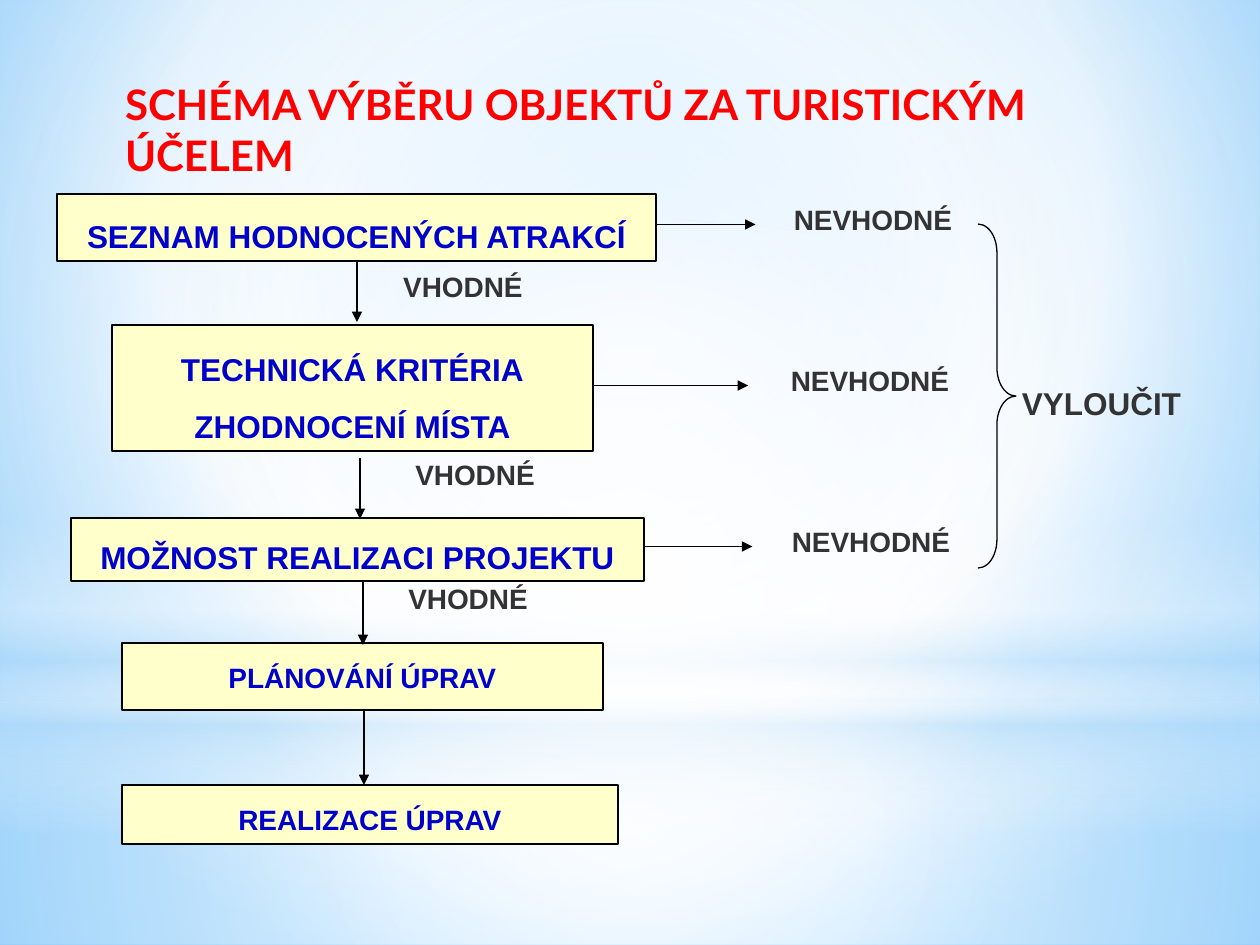
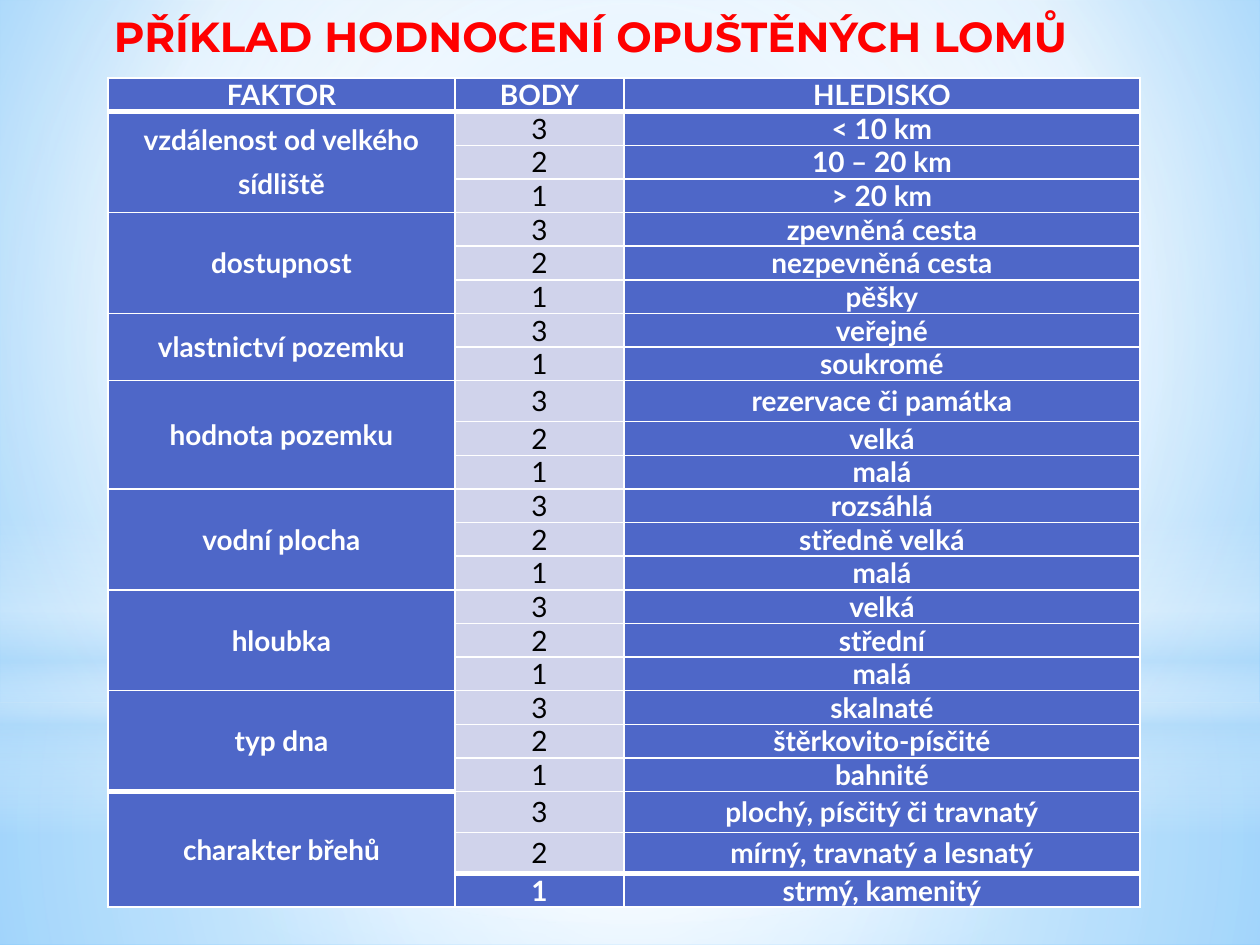
from lxml.etree import SubElement
from pptx import Presentation
from pptx.dml.color import RGBColor
from pptx.enum.shapes import MSO_CONNECTOR, MSO_SHAPE
from pptx.enum.text import MSO_ANCHOR, PP_ALIGN
from pptx.oxml.ns import qn
from pptx.util import Emu, Pt

PX = 914400 / 126
WIDTH, HEIGHT = 1260, 945

RED, BLACK, WHITE = "FF0000", "000000", "FFFFFF"
BOX_FILL, BOX_TEXT, LABEL_TEXT = "FFFFCC", "0000CC", "333333"
CELL_DARK, CELL_LIGHT = "4E67C8", "D0D3EB"
SKY = "B4DCFA"
CENTRE = (50, 50, 50, 50)

# Gradient stops: position, colour, opacity (all in percent)
PAGE_STOPS = [(0, "9ED5FF", 100), (60, WHITE, 100), (100, "5BB9FF", 100)]
BACKDROP = [
    # shape, left, top, width, height, stops, focus (None means top to bottom)
    (MSO_SHAPE.RECTANGLE, 0, 703, WIDTH, 242,
     [(0, WHITE, 91), (37, WHITE, 76), (100, SKY, 79)], CENTRE),
    (MSO_SHAPE.RECTANGLE, 0, 0, WIDTH, 703,
     [(0, WHITE, 89), (48, WHITE, 62), (100, SKY, 79)], CENTRE),
    (MSO_SHAPE.RECTANGLE, 0, 519, WIDTH, 315,
     [(0, WHITE, 0), (29, WHITE, 30), (45, SKY, 40), (55, WHITE, 26),
      (65, SKY, 60), (100, WHITE, 0)], None),
    (MSO_SHAPE.OVAL, 0, 220, WIDTH, 703,
     [(0, WHITE, 100), (56, WHITE, 0)], CENTRE),
]


def px(value):
    return Emu(round(value * PX))


def colour(code):
    return RGBColor.from_string(code)


def set_insets(holder, insets):
    """Set the inner margins of a text frame or a table cell."""
    holder.margin_left, holder.margin_top, holder.margin_right, holder.margin_bottom = map(px, insets)


def write(frame, text, size=16, font="Arial", ink=BLACK, bold=True,
          align=PP_ALIGN.CENTER, before=6, after=0, spacing=None):
    """Fill a text frame; a list gives one paragraph per item."""
    for index, line in enumerate([text] if isinstance(text, str) else text):
        para = frame.add_paragraph() if index else frame.paragraphs[0]
        para.text = line
        para.alignment = align
        para.space_before, para.space_after = Pt(before), Pt(after)
        if spacing:
            para.line_spacing = spacing
        for span in para.runs:
            span.font.size, span.font.name, span.font.bold = Pt(size), font, bold
            span.font.color.rgb = colour(ink)


def paint_gradient(parent, stops, focus=None):
    """Replace the solid fill inside parent by a gradient."""
    solid = parent.find(qn("a:solidFill"))
    gradient = SubElement(parent, qn("a:gradFill"), rotWithShape="1")
    parent.replace(solid, gradient)
    stop_list = SubElement(gradient, qn("a:gsLst"))
    for position, code, opacity in stops:
        stop = SubElement(stop_list, qn("a:gs"), pos=str(position * 1000))
        tint = SubElement(stop, qn("a:srgbClr"), val=code)
        if opacity < 100:
            SubElement(tint, qn("a:alpha"), val=str(opacity * 1000))
    if focus:
        circle = SubElement(gradient, qn("a:path"), path="circle")
        sides = {side: str(part * 1000) for side, part in zip("ltrb", focus)}
        SubElement(circle, qn("a:fillToRect"), **sides)
    else:
        SubElement(gradient, qn("a:lin"), ang="5400000", scaled="0")


def add_arrowhead(shape, end):
    shape.line._get_or_add_ln().append(
        shape._element.makeelement(qn("a:" + end), {"type": "triangle"}))


class SlideBuilder:
    """Holds the deck style and the current page."""

    def __init__(self):
        self.deck = Presentation()
        self.deck.slide_width, self.deck.slide_height = px(WIDTH), px(HEIGHT)
        self.page = None

    def new_page(self):
        self.page = self.deck.slides.add_slide(self.deck.slide_layouts[6])
        self.page.background.fill.solid()
        paint_gradient(self.page._element.find(".//" + qn("p:bgPr")), PAGE_STOPS, (20, 10, 20, 60))
        for kind, left, top, width, height, stops, focus in BACKDROP:
            glow = self.shape(kind, left, top, width, height, fill=WHITE)
            paint_gradient(glow._element.spPr, stops, focus)

    def shape(self, kind, left, top, width, height, fill=None, line=None):
        shape = self.page.shapes.add_shape(kind, px(left), px(top), px(width), px(height))
        shape.shadow.inherit = False
        if fill:
            shape.fill.solid()
            shape.fill.fore_color.rgb = colour(fill)
        else:
            shape.fill.background()
        if line:
            shape.line.color.rgb = colour(line)
            shape.line.width = Pt(0.75)
        else:
            shape.line.fill.background()
        return shape

    def fill_text(self, shape, text, insets=(0, 0, 0, 0), wrap=True, **style):
        frame = shape.text_frame
        frame.word_wrap = wrap
        frame.vertical_anchor = MSO_ANCHOR.TOP
        set_insets(frame, insets)
        write(frame, text, **style)

    def text(self, text, left, top, width, height, **style):
        box = self.page.shapes.add_textbox(px(left), px(top), px(width), px(height))
        self.fill_text(box, text, **style)

    def title(self, text, left, top, width, font, wrap=True):
        self.text(text, left, top, width, 63, size=24, font=font, ink=RED, before=0,
                  align=PP_ALIGN.LEFT, insets=(13, 6, 13, 6), wrap=wrap)

    def step(self, text, left, top, width, height, size=18, before=6, insets=(13, 1, 13, 6)):
        box = self.shape(MSO_SHAPE.RECTANGLE, left, top, width, height, BOX_FILL, BLACK)
        self.fill_text(box, text, size=size, ink=BOX_TEXT, before=before,
                       spacing=1.5, insets=insets)

    def callout(self, text, left, top, width, near, far):
        """Borderless label with an arrow from far to near (shares of its width)."""
        label = self.shape(MSO_SHAPE.LINE_CALLOUT_1_NO_BORDER, left, top, width, 43, line=BLACK)
        for index, value in enumerate((0.5, near, 0.5, far)):
            label.adjustments[index] = value
        add_arrowhead(label, "headEnd")
        self.fill_text(label, text, ink=LABEL_TEXT, insets=(3, 0, 0, 0))

    def down_arrow(self, x, top, bottom):
        arrow = self.page.shapes.add_connector(
            MSO_CONNECTOR.STRAIGHT, px(x), px(top), px(x), px(bottom))
        arrow.line.color.rgb = colour(BLACK)
        arrow.line.width = Pt(0.75)
        add_arrowhead(arrow, "tailEnd")
        SubElement(arrow._element.spPr, qn("a:effectLst"))

    def table(self, left, top, widths, heights):
        frame = self.page.shapes.add_table(
            len(heights), len(widths), px(left), px(top), px(sum(widths)), px(sum(heights)))
        table = frame.table
        table.first_row = table.horz_banding = False
        for column, width in zip(table.columns, widths):
            column.width = px(width)
        for row, height in zip(table.rows, heights):
            row.height = px(height)
        return table

    def cell(self, cell, text, fill=CELL_DARK, **style):
        cell.fill.solid()
        cell.fill.fore_color.rgb = colour(fill)
        cell.vertical_anchor = MSO_ANCHOR.MIDDLE
        write(cell.text_frame, text, font="Lato", **style)

    def cell_frame(self, cell, top, bottom):
        """Set the margins and the white rules of a cell."""
        set_insets(cell, (6, 0, 6, 0))
        if cell.is_spanned:
            SubElement(cell.text_frame.paragraphs[0]._p, qn("a:endParaRPr"), sz="1600")
        properties = cell._tc.get_or_add_tcPr()
        for index, (side, points) in enumerate(zip("LRTB", (1, 1, top, bottom))):
            line = SubElement(properties, qn("a:ln" + side), w=str(Pt(points)))
            SubElement(SubElement(line, qn("a:solidFill")), qn("a:srgbClr"), val=WHITE)
            properties.insert(index, line)


def build_scheme(builder):
    builder.new_page()
    # Rejection labels, whose arrows start beneath the steps
    for left, top, width, near, far in ((766, 203, 211, -0.05, -0.69),
                                        (759, 364, 219, -0.05, -0.76),
                                        (763, 525, 213, -0.05, -0.56)):
        builder.callout("NEVHODNÉ", left, top, width, near, far)
    # Steps of the selection
    builder.step("SEZNAM HODNOCENÝCH ATRAKCÍ", 57, 194, 599, 67, before=0, insets=(13, 4, 13, 6))
    builder.step("TECHNICKÁ KRITÉRIA\vZHODNOCENÍ MÍSTA", 112, 325, 481, 126, insets=(13, 6, 13, 6))
    builder.step("MOŽNOST REALIZACI PROJEKTU", 71, 518, 573, 63)
    builder.step("PLÁNOVÁNÍ ÚPRAV", 122, 643, 481, 67, size=16, insets=(3, 1, 3, 6))
    builder.step("REALIZACE ÚPRAV", 122, 785, 496, 59, size=16)
    # Arrows between the steps
    for x, top, bottom in ((357, 260, 322), (360, 458, 519), (363, 580, 645), (364, 710, 785)):
        builder.down_arrow(x, top, bottom)
    # Labels of the accepted sites
    for left, top in ((384, 270), (396, 458), (389, 582)):
        builder.text("VHODNÉ", left, top, 158, 48, ink=LABEL_TEXT)
    # Brace that gathers the rejected sites
    brace = builder.shape(MSO_SHAPE.RIGHT_BRACE, 978, 224, 38, 344, line=BLACK)
    brace.adjustments[0], brace.adjustments[1] = 0.75, 0.5
    builder.text("VYLOUČIT", 1016, 383, 171, 54, size=18, ink=LABEL_TEXT, insets=(0, 1, 0, 1))
    builder.title("SCHÉMA VÝBĚRU OBJEKTŮ ZA TURISTICKÝM ÚČELEM", 112, 73, 1075, "Lato")


HEADINGS = ["FAKTOR", "BODY", "HLEDISKO"]
FACTORS = [
    (["vzdálenost od velkého", "sídliště"],
     [(3, "< 10 km"), (2, "10 – 20 km"), (1, "> 20 km")]),
    ("dostupnost", [(3, "zpevněná cesta"), (2, "nezpevněná cesta"), (1, "pěšky")]),
    ("vlastnictví pozemku", [(3, "veřejné"), (1, "soukromé")]),
    ("hodnota pozemku", [(3, "rezervace či památka"), (2, "velká"), (1, "malá")]),
    ("vodní plocha", [(3, "rozsáhlá"), (2, "středně velká"), (1, "malá")]),
    ("hloubka", [(3, "velká"), (2, "střední"), (1, "malá")]),
    ("typ dna", [(3, "skalnaté"), (2, "štěrkovito-písčité"), (1, "bahnité")]),
    ("charakter břehů", [(3, "plochý, písčitý či travnatý"),
                         (2, "mírný, travnatý a lesnatý"), (1, "strmý, kamenitý")]),
]
TALL_ROWS = (9, 21, 22)
THICK_TOPS = {(1, 0), (1, 1), (1, 2), (21, 0), (23, 1), (23, 2)}


def build_rating(builder):
    builder.new_page()
    builder.title("PŘÍKLAD HODNOCENÍ OPUŠTĚNÝCH LOMŮ", 101, 5, 1036, "Montserrat", wrap=False)
    row_count = 1 + sum(len(levels) for _, levels in FACTORS)
    heights = [41 if row in TALL_ROWS else 33 for row in range(row_count)]
    table = builder.table(108, 78, (347, 169, 516), heights)
    # Heading row
    for column, heading in enumerate(HEADINGS):
        builder.cell(table.cell(0, column), heading, ink=WHITE, before=1, after=1)
    # One merged factor cell beside its levels
    row = 1
    for factor, levels in FACTORS:
        first = table.cell(row, 0)
        first.merge(table.cell(row + len(levels) - 1, 0))
        builder.cell(first, factor, ink=WHITE)
        for points, view in levels:
            if row == row_count - 1:
                builder.cell(table.cell(row, 1), str(points), ink=WHITE)
            else:
                builder.cell(table.cell(row, 1), str(points), fill=CELL_LIGHT, bold=False)
            builder.cell(table.cell(row, 2), view, ink=WHITE)
            row += 1
    # Margins and white rules, thicker at the breaks
    for row in range(row_count):
        for column in range(len(HEADINGS)):
            cell = table.cell(row, column)
            below = row + (cell.span_height if cell.is_merge_origin else 1)
            builder.cell_frame(cell, 3 if (row, column) in THICK_TOPS else 1,
                               3 if (below, column) in THICK_TOPS else 1)


def main():
    builder = SlideBuilder()
    build_scheme(builder)
    build_rating(builder)
    builder.deck.save("out.pptx")


if __name__ == "__main__":
    main()
